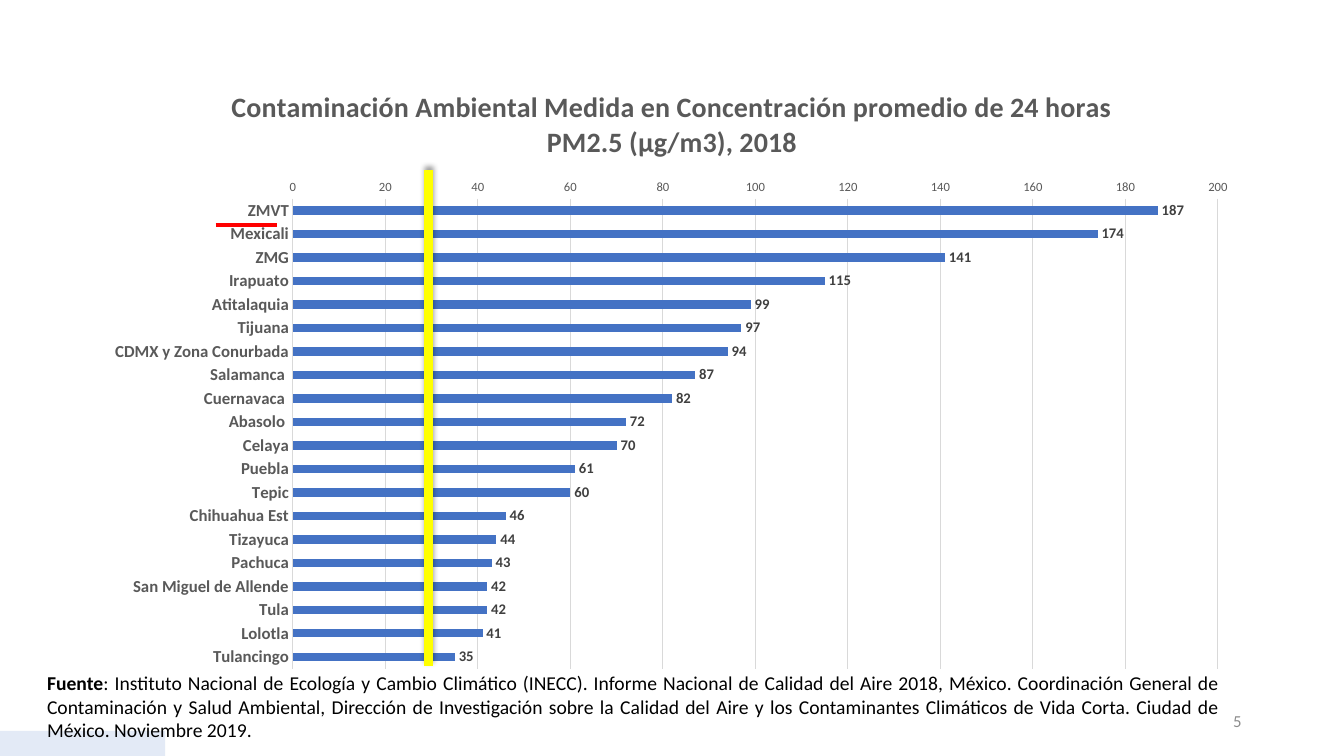
"""Builds a slide with a bar chart of PM2.5 concentrations in Mexican cities."""
from lxml.etree import SubElement
from pptx import Presentation
from pptx.chart.data import CategoryChartData
from pptx.dml.color import RGBColor
from pptx.enum.chart import XL_CHART_TYPE, XL_LABEL_POSITION, XL_TICK_MARK
from pptx.enum.shapes import MSO_CONNECTOR, MSO_SHAPE
from pptx.enum.text import MSO_ANCHOR, MSO_AUTO_SIZE, PP_ALIGN
from pptx.oxml import parse_xml
from pptx.oxml.ns import nsdecls, qn
from pptx.util import Pt

BLACK = RGBColor(0x00, 0x00, 0x00)
DARK = RGBColor(0x40, 0x40, 0x40)
GRAY = RGBColor(0x59, 0x59, 0x59)
MUTED = RGBColor(0x8C, 0x8C, 0x8C)
GRID = RGBColor(0xD9, 0xD9, 0xD9)
BLUE = RGBColor(0x44, 0x72, 0xC4)
PALE = RGBColor(0xE3, 0xEA, 0xF6)
YELLOW = RGBColor(0xFF, 0xFF, 0x00)
RED = RGBColor(0xFF, 0x00, 0x00)

TITLE = ("Contaminación Ambiental Medida en Concentración promedio de 24 horas "
         "PM2.5 (μg/m3), 2018")
SOURCE = (": Instituto Nacional de Ecología y Cambio Climático (INECC). Informe Nacional "
          "de Calidad del Aire 2018, México. Coordinación General de Contaminación y Salud "
          "Ambiental, Dirección de Investigación sobre la Calidad del Aire y los "
          "Contaminantes Climáticos de Vida Corta. Ciudad de México. Noviembre 2019. ")
CITIES = {
    "ZMVT": 187, "Mexicali": 174, "ZMG": 141, "Irapuato": 115, "Atitalaquia": 99,
    "Tijuana": 97, "CDMX y Zona Conurbada": 94, "Salamanca ": 87, "Cuernavaca ": 82,
    "Abasolo ": 72, "Celaya": 70, "Puebla": 61, "Tepic": 60, "Chihuahua Est": 46,
    "Tizayuca": 44, "Pachuca": 43, "San Miguel de Allende": 42, "Tula": 42,
    "Lolotla": 41, "Tulancingo": 35,
}


class SlideBuilder:
    """Holds the style and the current slide."""

    font = "Calibri"

    def __init__(self, slide):
        self.s = slide

    def style(self, font, size, color, bold=False):
        """Formats one font."""
        font.name, font.size, font.bold = self.font, Pt(size), bold
        font.color.rgb = color

    def rect(self, x, y, w, h, fill):
        """Adds a plain filled rectangle."""
        sp = self.s.shapes.add_shape(MSO_SHAPE.RECTANGLE, Pt(x), Pt(y), Pt(w), Pt(h))
        sp.shadow.inherit = False
        sp.fill.solid()
        sp.fill.fore_color.rgb = fill
        sp.line.fill.background()

    def text(self, x, y, w, h, text, size=14, color=BLACK, lead="",
             align=PP_ALIGN.LEFT, anchor=MSO_ANCHOR.TOP, grow=False):
        """Adds a text box, with an optional bold lead before the text."""
        tf = self.s.shapes.add_textbox(Pt(x), Pt(y), Pt(w), Pt(h)).text_frame
        tf.word_wrap = True
        tf.vertical_anchor = anchor
        tf.auto_size = MSO_AUTO_SIZE.SHAPE_TO_FIT_TEXT if grow else MSO_AUTO_SIZE.NONE
        p = tf.paragraphs[0]
        p.alignment = align
        for part, bold in ((lead, True), (text, False)):
            if part:
                r = p.add_run()
                r.text = part
                self.style(r.font, size, color, bold)

    def line(self, x1, y1, x2, y2, color, width, shadow=False):
        """Adds a straight line, with an optional upward shadow."""
        sp = self.s.shapes.add_connector(MSO_CONNECTOR.STRAIGHT, Pt(x1), Pt(y1), Pt(x2), Pt(y2))
        sp.line.color.rgb = color
        sp.line.width = Pt(width)
        effects = SubElement(sp._element.spPr, qn("a:effectLst"))
        if shadow:
            effects.append(parse_xml(
                f'<a:outerShdw {nsdecls("a")} blurRad="{Pt(4)}" dist="{Pt(3)}" dir="16200000" '
                'rotWithShape="0"><a:srgbClr val="000000"><a:alpha val="40000"/></a:srgbClr>'
                '</a:outerShdw>'))

    def bar_chart(self, x, y, w, h, title, values, plot):
        """Adds a horizontal bar chart with its first category on top."""
        data = CategoryChartData()
        data.categories = list(values)
        data.add_series(title, list(values.values()))
        chart = self.s.shapes.add_chart(
            XL_CHART_TYPE.BAR_CLUSTERED, Pt(x), Pt(y), Pt(w), Pt(h), data).chart
        self.style(chart.font, 10, BLACK)
        chart.has_legend = False
        p = chart.chart_title.text_frame.paragraphs[0]
        r = p.add_run()
        r.text = title
        self.style(r.font, 20, GRAY, True)
        chart.chart_title.include_in_layout = False
        self.plot_layout(chart, plot)

        cats, vals = chart.category_axis, chart.value_axis
        for axis, size, bold in ((cats, 12, True), (vals, 9, False)):
            axis.major_tick_mark = axis.minor_tick_mark = XL_TICK_MARK.NONE
            self.style(axis.tick_labels.font, size, GRAY, bold)
        cats.reverse_order = True
        vals.minimum_scale, vals.maximum_scale, vals.major_unit = 0, 200, 20
        vals.format.line.fill.background()
        for ln in (cats.format.line, vals.major_gridlines.format.line):
            ln.color.rgb = GRID
            ln.width = Pt(0.75)

        bars = chart.plots[0]
        bars.gap_width = 182
        bars.vary_by_categories = False
        fill = bars.series[0].format.fill
        fill.solid()
        fill.fore_color.rgb = BLUE
        labels = bars.series[0].data_labels
        labels.show_value = True
        labels.position = XL_LABEL_POSITION.OUTSIDE_END
        self.style(labels.font, 10.5, DARK, True)

    def plot_layout(self, chart, plot):
        """Places the inner plot area by fractions of the chart."""
        area = chart._chartSpace.chart.plotArea
        for old in area.findall(qn("c:layout")):
            area.remove(old)
        marks = "".join(f'<c:{k}Mode val="edge"/>' for k in "xy")
        sizes = "".join(f'<c:{k} val="{v}"/>' for k, v in zip("xywh", plot))
        area.insert(0, parse_xml(
            f'<c:layout {nsdecls("c")}><c:manualLayout><c:layoutTarget val="inner"/>'
            f'{marks}{sizes}</c:manualLayout></c:layout>'))


def main():
    """Builds and saves the slide."""
    prs = Presentation()
    prs.slide_width, prs.slide_height = Pt(960), Pt(540)
    b = SlideBuilder(prs.slides.add_slide(prs.slide_layouts[6]))
    b.rect(0, 522, 118, 18, PALE)
    b.text(678, 500.5, 216, 28.75, "5", size=12, color=MUTED,
           align=PP_ALIGN.RIGHT, anchor=MSO_ANCHOR.MIDDLE)
    b.bar_chart(66, 46, 828, 440, TITLE, CITIES, plot=(0.173, 0.218, 0.798, 0.763))
    b.line(306, 121.5, 306, 476, YELLOW, 6, shadow=True)
    b.text(26.5, 476, 852, 58, SOURCE, lead="Fuente", align=PP_ALIGN.JUSTIFY, grow=True)
    b.line(154, 160.5, 198, 160.5, RED, 3)
    prs.save("out.pptx")


if __name__ == "__main__":
    main()
